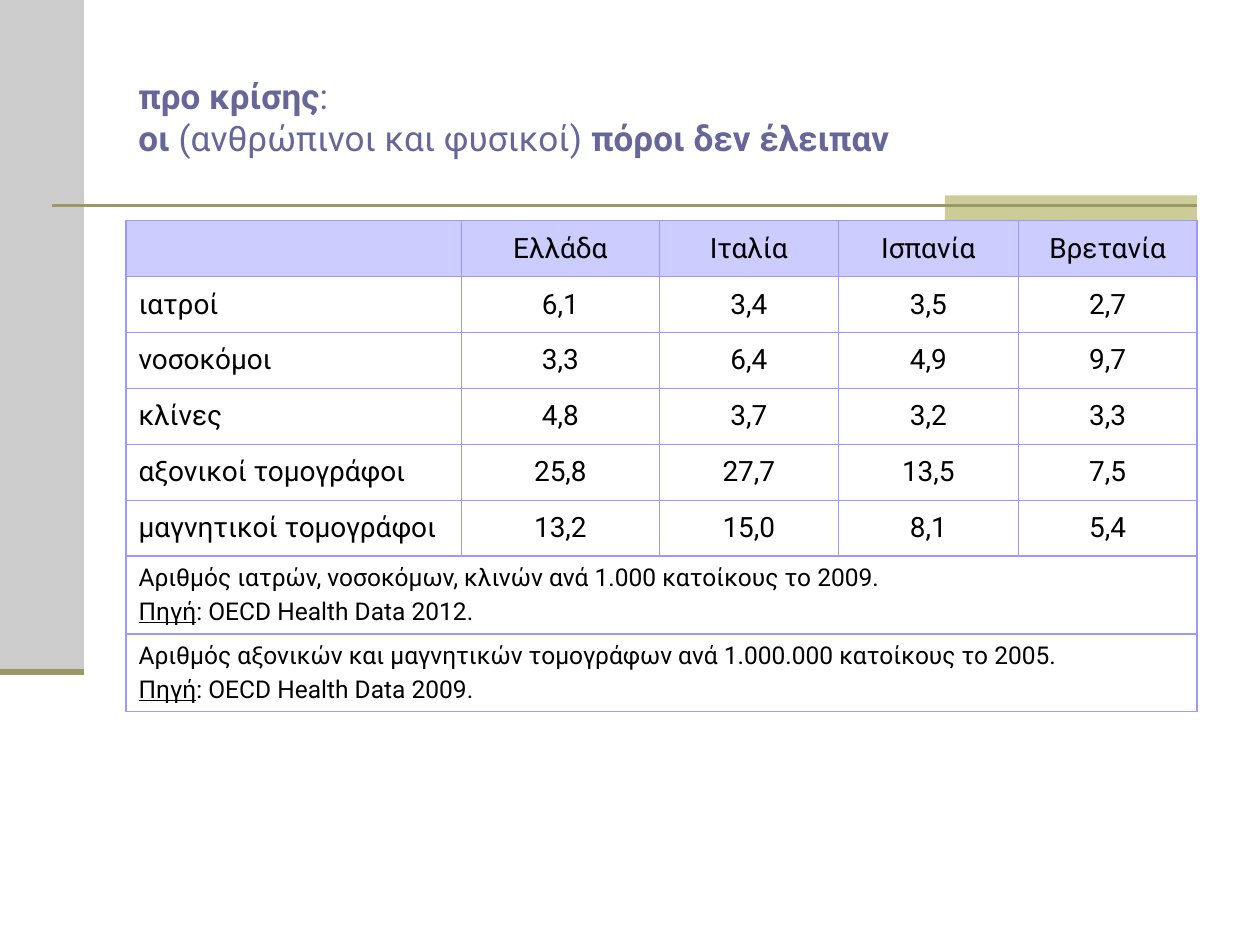
from typing import NamedTuple

from lxml.etree import SubElement
from pptx import Presentation
from pptx.dml.color import RGBColor
from pptx.enum.shapes import MSO_CONNECTOR, MSO_SHAPE
from pptx.enum.text import MSO_ANCHOR as Anchor, PP_ALIGN as Align
from pptx.oxml.ns import qn
from pptx.util import Pt

BLACK = RGBColor(0x00, 0x00, 0x00)
WHITE = RGBColor(0xFF, 0xFF, 0xFF)
GREY = RGBColor(0xCC, 0xCC, 0xCC)
SAND = RGBColor(0xCC, 0xCC, 0x99)
OLIVE = RGBColor(0x99, 0x99, 0x66)
SLATE = RGBColor(0x66, 0x66, 0x99)
LAVENDER = RGBColor(0xCC, 0xCC, 0xFF)
VIOLET = RGBColor(0x99, 0x99, 0xFF)
FONT = "Roboto"


class Block(NamedTuple):
    left: float
    top: float
    width: float
    height: float
    color: RGBColor


class Rule(NamedTuple):
    left: float
    right: float
    top: float
    weight: float


class Span(NamedTuple):
    text: str
    bold: bool = False
    underline: bool = False


BLOCKS = [Block(0, 0, 48, 384, GREY), Block(540, 111.6, 144, 14.4, SAND)]
RULES = [Rule(30, 684, 117.6, 1.5), Rule(0, 48, 384, 3.5)]

TITLE = [[
    Span("προ κρίσης", bold=True), Span(":"), Span("\n"),
    Span("οι ", bold=True), Span("(ανθρώπινοι και φυσικοί)"),
    Span(" πόροι δεν έλειπαν", bold=True),
]]

COLUMN_WIDTHS = [191.7, 113.1, 102.3, 102.9, 102]
DATA_ROW_HEIGHT = 32
NOTE_ROW_HEIGHT = 44.4
DATA = [
    ["", "Ελλάδα", "Ιταλία", "Ισπανία", "Βρετανία"],
    ["ιατροί", "6,1", "3,4", "3,5", "2,7"],
    ["νοσοκόμοι", "3,3", "6,4", "4,9", "9,7"],
    ["κλίνες", "4,8", "3,7", "3,2", "3,3"],
    ["αξονικοί τομογράφοι", "25,8", "27,7", "13,5", "7,5"],
    ["μαγνητικοί τομογράφοι", "13,2", "15,0", "8,1", "5,4"],
]
NOTES = [
    ("Αριθμός ιατρών, νοσοκόμων, κλινών ανά 1.000 κατοίκους το 2009.",
     ": OECD Health Data 2012."),
    ("Αριθμός αξονικών και μαγνητικών τομογράφων ανά 1.000.000 κατοίκους το 2005.",
     ": OECD Health Data 2009."),
]


def write_text(frame, paragraphs: list[list[Span]], *, size: float,
               color: RGBColor = BLACK, align=Align.LEFT, gap: float = 0) -> None:
    """Fill a text frame; a span holding only a newline is a line break."""
    for index, spans in enumerate(paragraphs):
        paragraph = frame.add_paragraph() if index else frame.paragraphs[0]
        paragraph.alignment = align
        paragraph.space_before = Pt(gap if index else 0)
        paragraph.font.size = Pt(size)
        for span in spans:
            if span.text == "\n":
                paragraph.add_line_break()
                continue
            run = paragraph.add_run()
            run.text = span.text
            font = run.font
            font.name, font.size = FONT, Pt(size)
            font.bold, font.underline = span.bold, span.underline
            font.color.rgb = color


def draw_block(slide, block: Block) -> None:
    shape = slide.shapes.add_shape(
        MSO_SHAPE.RECTANGLE, Pt(block.left), Pt(block.top), Pt(block.width), Pt(block.height))
    shape.shadow.inherit = False
    shape.fill.solid()
    shape.fill.fore_color.rgb = block.color
    shape.line.fill.background()


def draw_rule(slide, rule: Rule) -> None:
    connector = slide.shapes.add_connector(
        MSO_CONNECTOR.STRAIGHT, Pt(rule.left), Pt(rule.top), Pt(rule.right), Pt(rule.top))
    connector.line.color.rgb = OLIVE
    connector.line.width = Pt(rule.weight)
    SubElement(connector._element.spPr, qn("a:effectLst"))


def draw_title(slide) -> None:
    frame = slide.shapes.add_textbox(Pt(72), Pt(21.6), Pt(612), Pt(90)).text_frame
    frame.word_wrap = True
    frame.vertical_anchor = Anchor.MIDDLE
    write_text(frame, TITLE, size=20, color=SLATE)


def style_cell(cell, color: RGBColor) -> None:
    """Set borders before the fill, as the schema orders them."""
    properties = cell._tc.get_or_add_tcPr()
    for side in ("lnL", "lnR", "lnT", "lnB"):
        border = SubElement(properties, qn(f"a:{side}"), w=str(Pt(1)))
        SubElement(SubElement(border, qn("a:solidFill")), qn("a:srgbClr"), val=str(VIOLET))
    cell.fill.solid()
    cell.fill.fore_color.rgb = color
    cell.vertical_anchor = Anchor.MIDDLE


def draw_table(slide) -> None:
    heights = [DATA_ROW_HEIGHT] * len(DATA) + [NOTE_ROW_HEIGHT] * len(NOTES)
    table = slide.shapes.add_table(
        len(heights), len(COLUMN_WIDTHS), Pt(72), Pt(126),
        Pt(sum(COLUMN_WIDTHS)), Pt(sum(heights))).table
    for column, width in zip(table.columns, COLUMN_WIDTHS):
        column.width = Pt(width)
    for index, (row, height) in enumerate(zip(table.rows, heights)):
        row.height = Pt(height)
        for cell in row.cells:
            style_cell(cell, WHITE if index else LAVENDER)

    for row, values in zip(table.rows, DATA):
        for index, (cell, value) in enumerate(zip(row.cells, values)):
            if value:
                write_text(cell.text_frame, [[Span(value)]], size=16,
                           align=Align.CENTER if index else Align.LEFT)

    for index, (note, source) in enumerate(NOTES, start=len(DATA)):
        cell = table.cell(index, 0)
        cell.merge(table.cell(index, len(COLUMN_WIDTHS) - 1))
        source_line = [Span("Πηγή", underline=True), Span(source)]
        write_text(cell.text_frame, [[Span(note)], source_line], size=14, gap=2.8)


def main() -> None:
    presentation = Presentation()
    presentation.slide_width, presentation.slide_height = Pt(720), Pt(540)
    slide = presentation.slides.add_slide(presentation.slide_layouts[6])
    for block in BLOCKS:
        draw_block(slide, block)
    for rule in RULES:
        draw_rule(slide, rule)
    draw_title(slide)
    draw_table(slide)
    presentation.save("out.pptx")


if __name__ == "__main__":
    main()
